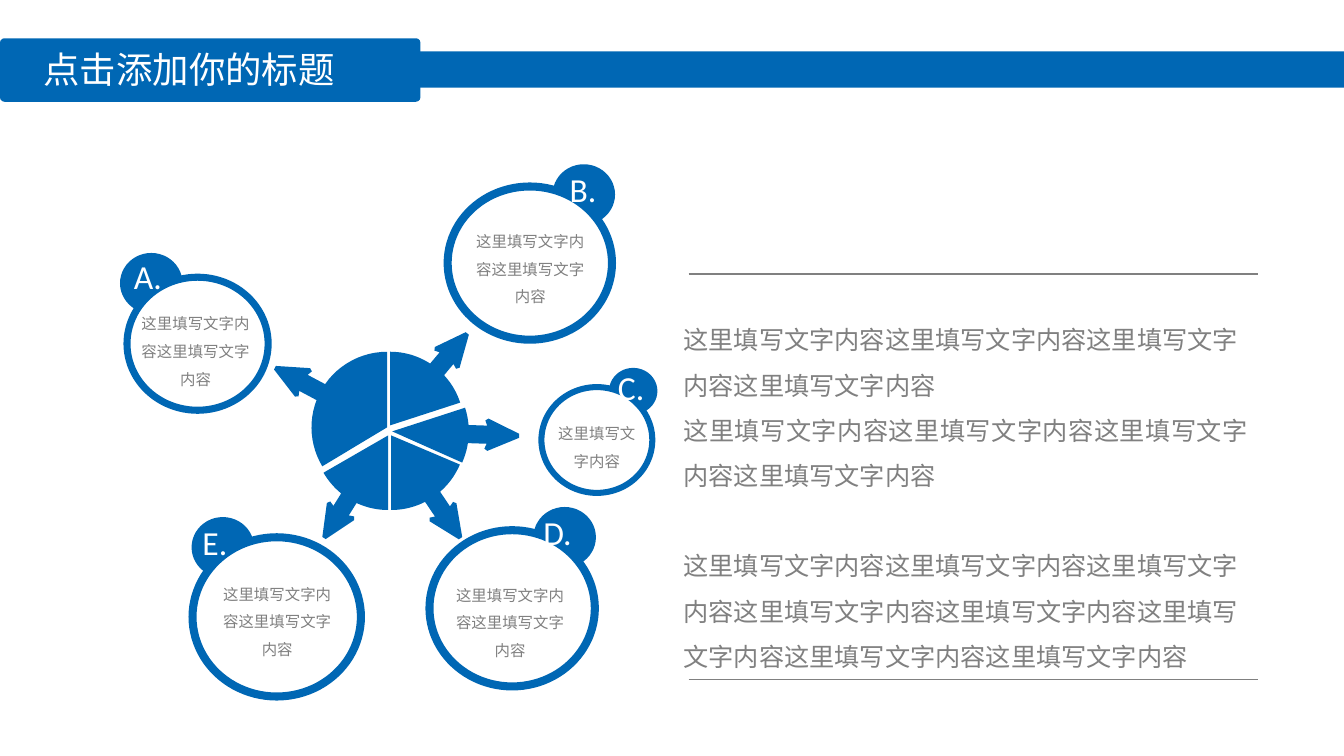
import math

import pptx
import pptx.dml.color
import pptx.enum.shapes
import pptx.enum.text
import pptx.oxml.ns
import pptx.util
from lxml import etree

PX = 9144  # 100 px to the inch
BLUE, GREY, WHITE = "0067B4", "808080", "FFFFFF"
CHINESE_FONT = "Noto Sans CJK SC"
SHAPES = pptx.enum.shapes.MSO_SHAPE
ALIGN = pptx.enum.text.PP_ALIGN
PHRASE = "这里填写文字内容"


def paint(shape, fill, line=None, width=0):
    """Give a shape a flat fill and, where asked, an outline of width px."""
    shape.shadow.inherit = False
    shape.fill.solid()
    shape.fill.fore_color.rgb = pptx.dml.color.RGBColor.from_string(fill)
    if line:
        shape.line.color.rgb = pptx.dml.color.RGBColor.from_string(line)
        shape.line.width = width * PX
    else:
        shape.line.fill.background()


def write(shape, text, *, size, color, font="Calibri", align=ALIGN.LEFT,
          spacing=1.0, before=0, anchor=pptx.enum.text.MSO_ANCHOR.TOP):
    """Add one paragraph, using the first paragraph while it is still empty."""
    frame = shape.text_frame
    frame.word_wrap = True
    frame.vertical_anchor = anchor
    paragraph = frame.add_paragraph() if frame.text else frame.paragraphs[0]
    paragraph.alignment = align
    paragraph.line_spacing = spacing
    paragraph.space_before = pptx.util.Pt(before)
    run = paragraph.add_run()
    run.text = text
    run.font.size = pptx.util.Pt(size)
    run.font.name = font
    run.font.color.rgb = pptx.dml.color.RGBColor.from_string(color)
    east_asian = etree.Element(pptx.oxml.ns.qn("a:ea"), typeface=CHINESE_FONT)
    run.font._element.find(pptx.oxml.ns.qn("a:latin")).addnext(east_asian)


presentation = pptx.Presentation()
presentation.slide_width = 1333 * PX
presentation.slide_height = 750 * PX
slide = presentation.slides.add_slide(presentation.slide_layouts[5])
shapes = slide.shapes

# Title banner
stripe = shapes.add_shape(SHAPES.RECTANGLE, 19 * PX, 51 * PX, 1314 * PX, 36 * PX)
paint(stripe, BLUE)
banner = shapes.add_shape(SHAPES.ROUNDED_RECTANGLE, 0, 38 * PX, 417 * PX, 63 * PX)
banner.adjustments[0] = 0.07
paint(banner, BLUE)
title = shapes.title
title.left, title.top, title.width, title.height = 33 * PX, 41 * PX, 368 * PX, 54 * PX
banner._element.addnext(title._element)
write(title, "点击添加你的标题", size=26, color=WHITE, font=CHINESE_FONT,
      anchor=pptx.enum.text.MSO_ANCHOR.MIDDLE)

# Pie slices with arrows: apex, radius, start and end angle, arrow angle and reach
slices = [
    (387, 422, 73, -90, -18, -50, 121),
    (384, 424, 75, 149, 270, 208, 128),
    (389, 428, 76, -18, 24, 2, 128),
    (388, 432, 74, 23, 90, 56, 125),
    (385, 432, 74, 90, 150, 122, 122),
]
SHAFT_HALF = 9
HEAD_LENGTH = 34
for apex_x, apex_y, radius, start, end, direction, reach in slices:
    shaft_angle = math.degrees(math.asin(SHAFT_HALF / radius))
    neck = reach - HEAD_LENGTH
    half_arrow = [(neck, SHAFT_HALF), (neck - 2, 14), (neck + 1, 16), (reach - 2, 2)]
    arrow = [(along, -across) for along, across in half_arrow] + half_arrow[::-1]
    polar = [(0, 0)]
    for first, last in ((start, direction - shaft_angle), (direction + shaft_angle, end)):
        polar += [(radius, first + (last - first) * step / 12) for step in range(13)]
        if last != end:
            polar += [(math.hypot(along, across),
                       direction + math.degrees(math.atan2(across, along)))
                      for along, across in arrow]
    points = [((apex_x + distance * math.cos(math.radians(angle))) * PX,
               (apex_y + distance * math.sin(math.radians(angle))) * PX)
              for distance, angle in polar]
    builder = shapes.build_freeform(*points[0], scale=1.0)
    builder.add_line_segments(points[1:], close=True)
    paint(builder.convert_to_shape(), BLUE)

# Bubbles: letter, badge box, ring box and thickness, letter box, caption box, phrases
bubbles = [
    ("A.", (119, 251, 62, 60), (123, 272, 147, 139), 7, (123, 249, 51), (129, 298, 130, 93), 2),
    ("B.", (548, 163, 62, 60), (440, 181, 171, 160), 8, (555, 163, 49), (461, 216, 130, 93), 2),
    ("C.", (604, 365, 48, 46), (534, 381, 116, 111), 6, (603, 359, 49), (537, 407, 110, 62), 1),
    ("D.", (529, 503, 62, 60), (422, 522, 172, 163), 8, (529, 503, 51), (441, 567, 130, 93), 2),
    ("E.", (190, 513, 62, 60), (187, 529, 175, 166), 8, (191, 513, 48), (210, 566, 130, 93), 2),
]
for letter, badge_box, ring_box, thickness, letter_box, caption_box, phrases in bubbles:
    badge = shapes.add_shape(SHAPES.OVAL, *[length * PX for length in badge_box])
    paint(badge, BLUE)
    left, top, width, height = ring_box
    ring = shapes.add_shape(SHAPES.OVAL, (left + thickness // 2) * PX,
                            (top + thickness // 2) * PX,
                            (width - thickness) * PX, (height - thickness) * PX)
    paint(ring, WHITE, BLUE, thickness)
    label = shapes.add_textbox(*[length * PX for length in letter_box], 50 * PX)
    write(label, letter, size=24, color=WHITE)
    caption = shapes.add_textbox(*[length * PX for length in caption_box])
    write(caption, PHRASE * phrases, size=11, color=GREY, align=ALIGN.CENTER, spacing=1.5)

# Body text between two rules
body = shapes.add_textbox(668 * PX, 302 * PX, 580 * PX, 374 * PX)
for phrases, align, before in ((4, ALIGN.LEFT, 0), (4, ALIGN.JUSTIFY, 0), (8, ALIGN.LEFT, 32)):
    write(body, PHRASE * phrases, size=18, color=GREY, align=align, spacing=1.5, before=before)
for rule_y in (272, 674):
    rule = shapes.add_connector(pptx.enum.shapes.MSO_CONNECTOR.STRAIGHT,
                                683 * PX, rule_y * PX, 1248 * PX, rule_y * PX)
    rule.line.color.rgb = pptx.dml.color.RGBColor.from_string(GREY)
    rule.line.width = pptx.util.Pt(1)
    etree.SubElement(rule._element.spPr, pptx.oxml.ns.qn("a:effectLst"))

presentation.save("out.pptx")
